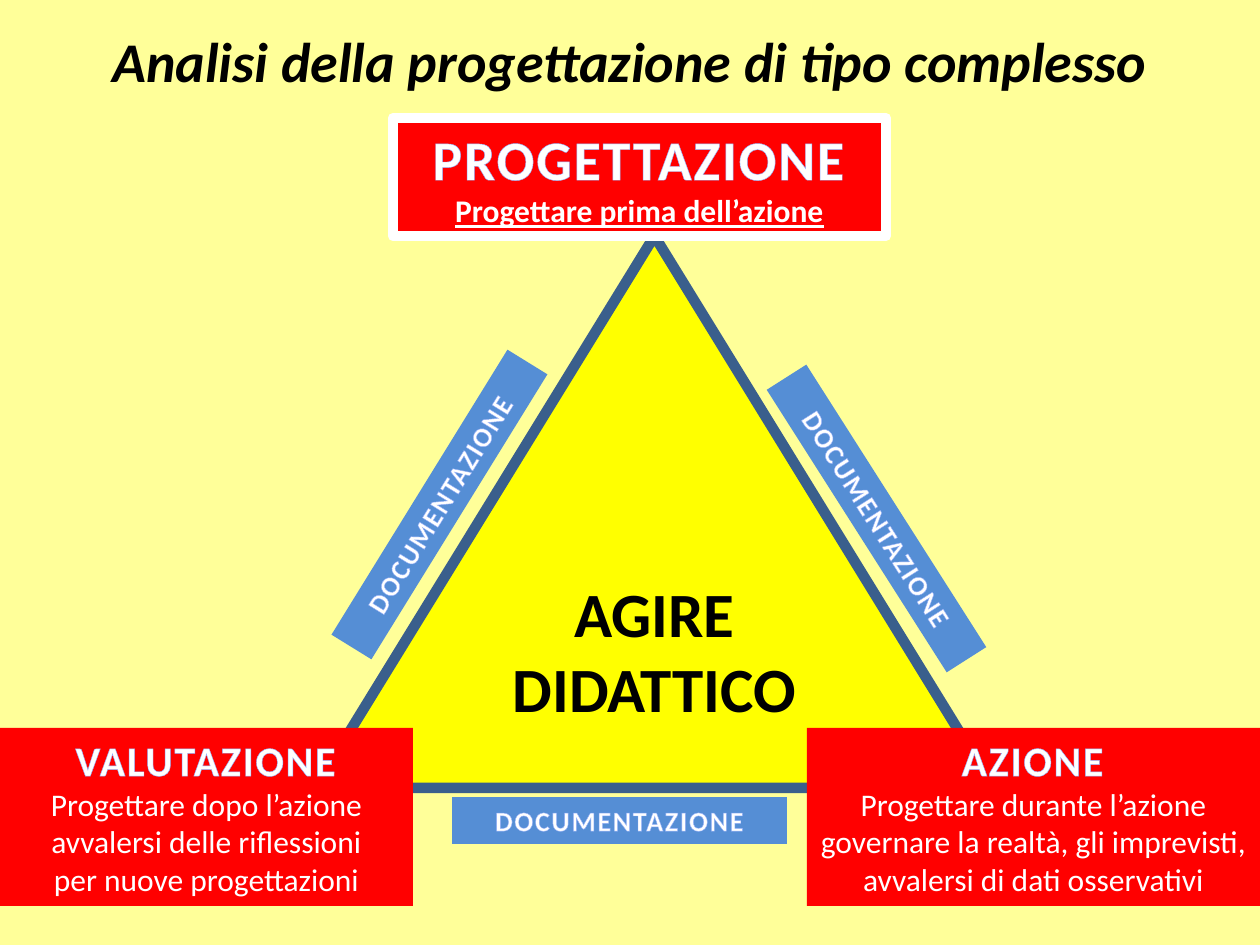
from lxml import etree
from pptx import Presentation
from pptx.dml.color import RGBColor
from pptx.enum.shapes import MSO_SHAPE as Shape
from pptx.enum.text import MSO_ANCHOR as Anchor, PP_ALIGN as Align
from pptx.oxml.ns import qn
from pptx.util import Pt

EMU_PER_PX = 914400 / 126
FONT = "Calibri"
RED, BLUE, YELLOW, WHITE, BLACK = "FF0000", "558ED5", "FFFF00", "FFFFFF", "000000"
EDGE, GLOW, PAPER = "3A5F8C", "93AEF7", "FFFF99"


def px(value):
    return round(value * EMU_PER_PX)


def rgb(color):
    return RGBColor.from_string(color)


def add_block(page, kind, bounds, fill, edge=None, anchor=Anchor.TOP, angle=0):
    """Add a flat preset shape and return its text frame."""
    shape = page.shapes.add_shape(kind, *map(px, bounds))
    shape.shadow.inherit = False
    shape.rotation = angle
    shape.fill.solid()
    shape.fill.fore_color.rgb = rgb(fill)
    if edge:
        shape.line.color.rgb = rgb(edge)
        shape.line.width = Pt(6)
    else:
        shape.line.fill.background()
    frame = shape.text_frame
    frame.word_wrap = True
    frame.vertical_anchor = anchor
    return frame


def add_para(frame, size, color, bold=False, italic=False):
    """Start a centred paragraph, using the empty first one if it is free."""
    para = frame.paragraphs[0]
    if para.runs:
        para = frame.add_paragraph()
    para.alignment = Align.CENTER
    font = para.font
    font.name, font.size = FONT, Pt(size)
    font.bold, font.italic = bold, italic
    font.color.rgb = rgb(color)
    return para


def add_span(para, text):
    span = para.add_run()
    span.text = text
    return span


def add_outlined_span(para, text, size):
    """Add a bold, letter-spaced span with a thin coloured outline."""
    span = add_span(para, text)
    span.font.size, span.font.bold = Pt(size), True
    props = span.font._element
    props.set("spc", "100")
    line = etree.Element(qn("a:ln"), w=str(Pt(1.42)))
    fill = etree.SubElement(line, qn("a:solidFill"))
    etree.SubElement(fill, qn("a:srgbClr"), val=GLOW)
    props.insert(0, line)


def add_phase(page, bounds, heading, size, lines, edge=None, emphasis=False):
    """Add a red box: outlined heading, then the description lines."""
    frame = add_block(page, Shape.RECTANGLE, bounds, RED, edge)
    para = add_para(frame, 18, WHITE, bold=emphasis)
    add_outlined_span(para, heading, size)
    para.add_line_break()
    add_span(para, lines[0]).font.underline = emphasis
    for line in lines[1:]:
        add_span(add_para(frame, 18, WHITE), line)


def add_side_label(page, left, top, angle):
    frame = add_block(page, Shape.RECTANGLE, (left, top, 335, 47), BLUE, angle=angle)
    add_outlined_span(add_para(frame, 16, WHITE, bold=True), "DOCUMENTAZIONE", 16)


def add_title(page, text):
    box = page.shapes.add_textbox(*map(px, (0, 20, 1260, 81)))
    box.text_frame.word_wrap = True
    add_span(add_para(box.text_frame, 32, BLACK, bold=True, italic=True), text)


def main():
    deck = Presentation()
    deck.slide_width, deck.slide_height = px(1260), px(945)
    page = deck.slides.add_slide(deck.slide_layouts[6])
    page.background.fill.solid()
    page.background.fill.fore_color.rgb = rgb(PAPER)

    # Central triangle
    core = add_block(page, Shape.ISOSCELES_TRIANGLE, (315, 236, 679, 552),
                     YELLOW, EDGE, Anchor.MIDDLE)
    for word in ("AGIRE", "DIDATTICO"):
        add_span(add_para(core, 36, BLACK, bold=True), word)

    # Phases at the corners
    add_phase(page, (393, 118, 493, 118), "PROGETTAZIONE", 32,
              ["Progettare prima dell’azione"], edge=WHITE, emphasis=True)
    add_phase(page, (807, 728, 453, 178), "AZIONE", 24,
              ["Progettare durante l’azione",
               "governare la realtà, gli imprevisti, avvalersi di dati osservativi"])
    add_phase(page, (0, 728, 413, 178), "VALUTAZIONE", 24,
              ["Progettare dopo l’azione", "avvalersi delle riflessioni",
               "per nuove progettazioni"])

    # Labels along the sides
    for left, top, angle in ((272, 481, 301.7), (709, 495, 57.5), (452, 797, 0)):
        add_side_label(page, left, top, angle)

    add_title(page, "Analisi della progettazione di tipo complesso")
    deck.save("out.pptx")


if __name__ == "__main__":
    main()
